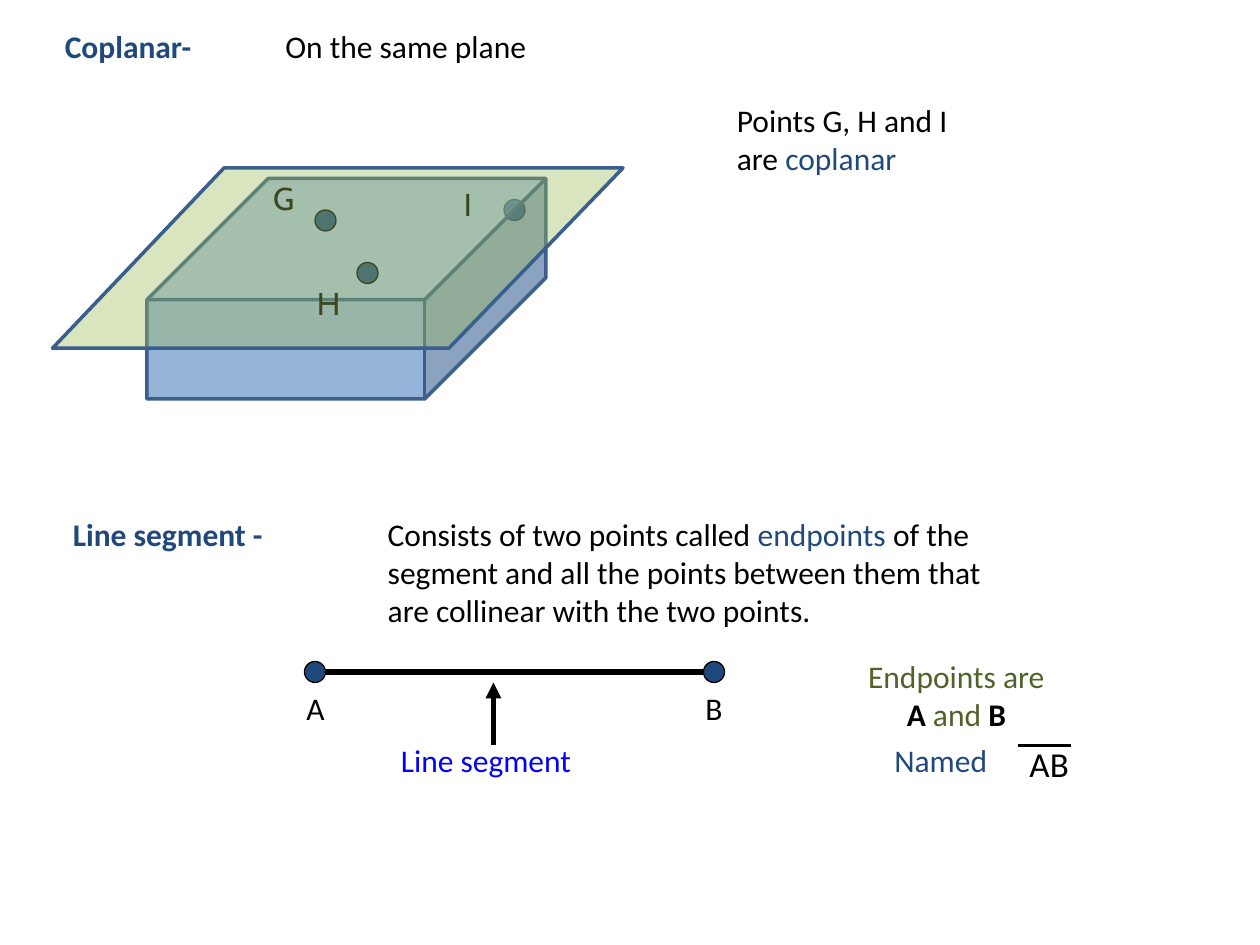
from lxml import etree
from pptx import Presentation
from pptx.dml.color import RGBColor
from pptx.enum import shapes, text
from pptx.oxml.ns import qn
from pptx.util import Pt

BLACK = RGBColor(0, 0, 0)
NAVY = RGBColor(0x1F, 0x49, 0x7D)
BLUE = RGBColor(0, 0, 0xFF)
OLIVE = RGBColor(0x4F, 0x62, 0x28)
CUBE_BLUE = RGBColor(0x4F, 0x81, 0xBD)
PLANE_GREEN = RGBColor(0x9B, 0xBB, 0x59)
EDGE = RGBColor(0x3A, 0x5F, 0x8C)
DOT = 12

prs = Presentation()
prs.slide_width, prs.slide_height = Pt(720), Pt(540)
s = prs.slides.add_slide(prs.slide_layouts[6])


def add_text(x, y, w, h, lines, size=18, font="Calibri", center=False):
    """Each line is a list of (words, colour, bold) runs."""
    tf = s.shapes.add_textbox(Pt(x), Pt(y), Pt(w), Pt(h)).text_frame
    tf.word_wrap = True
    for i, line in enumerate(lines):
        p = tf.add_paragraph() if i else tf.paragraphs[0]
        if center:
            p.alignment = text.PP_ALIGN.CENTER
        for words, color, bold in line:
            r = p.add_run()
            r.text = words
            r.font.name, r.font.size = font, Pt(size)
            r.font.bold, r.font.color.rgb = bold, color


def style(sp, fill, line, width, alpha=None):
    sp.shadow.inherit = False
    sp.fill.solid()
    sp.fill.fore_color.rgb = fill
    sp.line.color.rgb, sp.line.width = line, Pt(width)
    if alpha:
        clr = sp._element.spPr.find(qn("a:solidFill"))[0]
        etree.SubElement(clr, qn("a:alpha")).set("val", str(alpha * 1000))


# Definitions and captions
for x, y, w, h, lines in [
    (30, 12, 127, 36, [[("Coplanar-", NAVY, True)]]),
    (156, 12, 217, 36, [[("On the same plane", BLACK, False)]]),
    (414, 54, 197, 65, [[("Points G, H and I", BLACK, False)],
                        [("are ", BLACK, False), ("coplanar", NAVY, False)]]),
    (34.5, 291, 190, 36, [[("Line segment -", NAVY, True)]]),
    (214.5, 291, 499, 94, [
        [("Consists of two points called ", BLACK, False),
         ("endpoints ", NAVY, False), ("of the", BLACK, False)],
        [("segment and all the points between them that", BLACK, False)],
        [("are collinear with the two points.", BLACK, False)]]),
    (222, 420, 114, 29, [[("Line segment", BLUE, False)]]),
    (504, 420, 92, 36, [[("Named", NAVY, False)]]),
]:
    add_text(x, y, w, h, lines)
add_text(480, 372, 133, 50, [[("Endpoints are", OLIVE, False)],
                             [("A ", BLACK, True), ("and ", OLIVE, False),
                              ("B", BLACK, True)]], center=True)
add_text(575, 421, 49, 32, [[("AB", BLACK, False)]], size=20, center=True)

# Segment, pointer arrow and the bar over AB
for x1, y1, x2, y2, width, arrow in [
    (180, 384, 408, 384, 3, False),
    (282, 426, 282, 390, 3, True),
    (582, 426, 612, 426, 2.25, False),
]:
    c = s.shapes.add_connector(shapes.MSO_CONNECTOR.STRAIGHT,
                               Pt(x1), Pt(y1), Pt(x2), Pt(y2))
    c.line.color.rgb, c.line.width = BLACK, Pt(width)
    if arrow:
        etree.SubElement(c.line._get_or_add_ln(), qn("a:tailEnd")).set("type", "triangle")
    etree.SubElement(c._element.spPr, qn("a:effectLst"))

# Endpoint labels
for x, name in [(168, "A"), (396, "B")]:
    add_text(x, 390, 36, 36, [[(name, BLACK, False)]])

# Points: endpoints and I lie behind the cube, G and H in front of it
cube = None
for x, y in [(174, 378), (402, 378), (288, 114), (180, 120), (204, 150)]:
    if (x, y) == (180, 120):
        cube = s.shapes.add_shape(shapes.MSO_SHAPE.CUBE, Pt(84), Pt(102), Pt(228), Pt(126))
        cube.adjustments[0] = 0.55
        style(cube, CUBE_BLUE, EDGE, 2, alpha=60)
    sp = s.shapes.add_shape(shapes.MSO_SHAPE.OVAL, Pt(x), Pt(y), Pt(DOT), Pt(DOT))
    style(sp, NAVY, BLACK, 0.75)

# Point labels
for x, y, name in [(258, 102, "I"), (149, 99, "G"), (174, 159, "H")]:
    add_text(x, y, 40, 36, [[(name, BLACK, False)]], font="Cabin")

# Translucent plane over the cube
fb = s.shapes.build_freeform(Pt(128), Pt(96))
fb.add_line_segments([(Pt(x), Pt(y)) for x, y in [(356, 96), (256.5, 199), (30, 199)]])
style(fb.convert_to_shape(), PLANE_GREEN, EDGE, 2, alpha=38)

prs.save("out.pptx")
